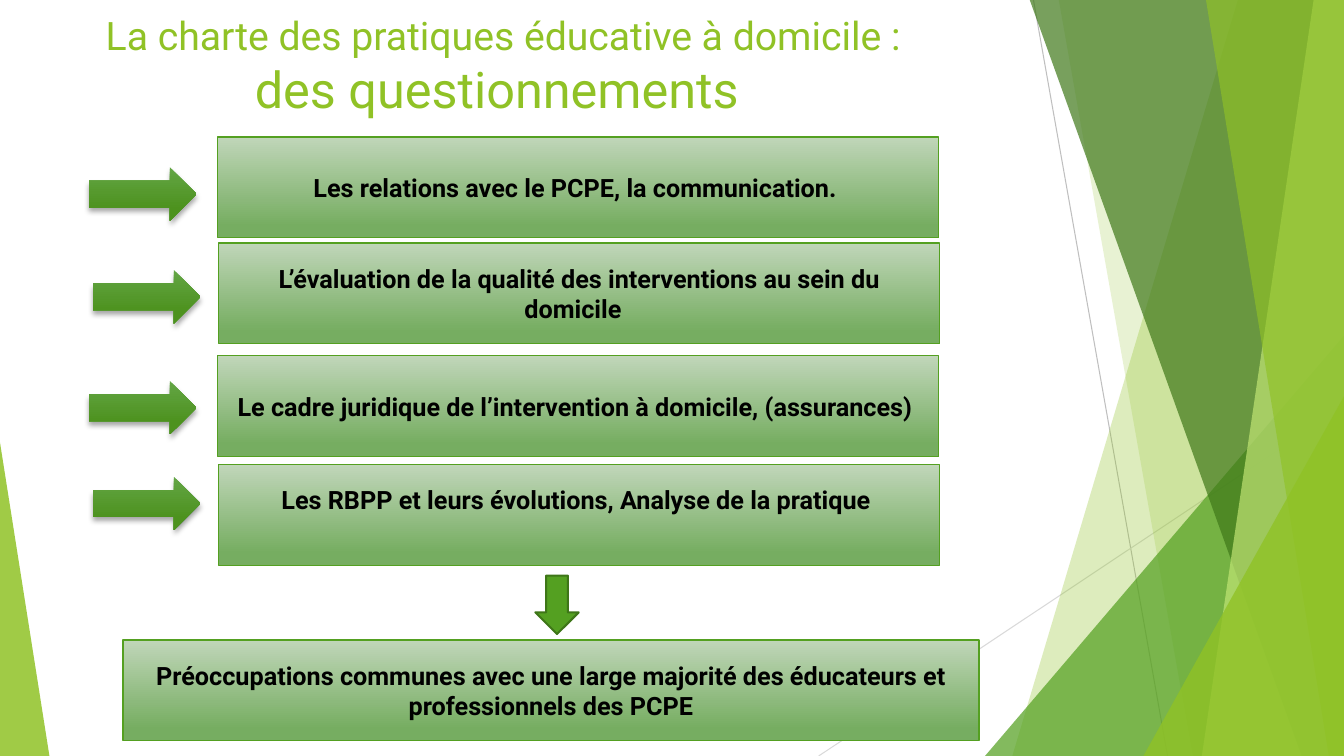
"""Build the slide on the questions raised by the home education charter."""
from lxml.etree import SubElement
from pptx import Presentation
from pptx.dml.color import RGBColor
from pptx.enum.shapes import MSO_CONNECTOR, MSO_SHAPE
from pptx.enum.text import MSO_ANCHOR, MSO_AUTO_SIZE, PP_ALIGN
from pptx.oxml.ns import qn
from pptx.util import Inches, Pt

COLORS = {
    "lime": "90C226", "green": "54A021", "forest": "3F7819", "pale": "C0E474",
    "box_top": "C0D6B9", "box_bottom": "76AD61",
    "arrow_top": "63A545", "arrow_bottom": "4D921E", "arrow_edge": "3E7618",
    "gray": "BFBFBF", "light_gray": "D9D9D9", "black": "000000",
}
FONT = "Roboto"


def paint(shape, colors, stop=1.0, opacity=100, edge=None, width=1):
    """Fill with one colour or a downward gradient, and set the outline."""
    shape.shadow.inherit = False
    if len(colors) == 2:
        shape.fill.gradient()
        shape.fill.gradient_angle = 270
        for gradient_stop, color, position in zip(shape.fill.gradient_stops, colors, (0, stop)):
            gradient_stop.color.rgb = RGBColor.from_string(COLORS[color])
            gradient_stop.position = position
    else:
        shape.fill.solid()
        shape.fill.fore_color.rgb = RGBColor.from_string(COLORS[colors[0]])
        if opacity < 100:
            color_node = shape._element.spPr.find(qn("a:solidFill"))[0]
            SubElement(color_node, qn("a:alpha"), val=str(opacity * 1000))
    if edge:
        shape.line.color.rgb = RGBColor.from_string(COLORS[edge])
        shape.line.width = Pt(width)
    else:
        shape.line.fill.background()


def add_run(paragraph, text, size, color, bold=False):
    """Append one formatted run."""
    run = paragraph.add_run()
    run.text = text
    run.font.name = FONT
    run.font.size = Pt(size)
    run.font.bold = bold
    run.font.color.rgb = RGBColor.from_string(COLORS[color])


presentation = Presentation()
presentation.slide_width = Inches(13.33)
presentation.slide_height = Inches(7.5)
slide = presentation.slides.add_slide(presentation.slide_layouts[5])
shapes = slide.shapes

for start_x, start_y, end_x, end_y, color in [
    (10.25, 0, 11.58, 7.5, "gray"),
    (13.33, 4.03, 8.12, 7.5, "light_gray"),
]:
    line = shapes.add_connector(
        MSO_CONNECTOR.STRAIGHT, Inches(start_x), Inches(start_y), Inches(end_x), Inches(end_y))
    line.line.color.rgb = RGBColor.from_string(COLORS[color])
    line.line.width = Pt(0.75)
    SubElement(line._element.spPr, qn("a:effectLst"))

facets = [
    ("band", 12.28, 10.04, "lime", 30),
    ("band", 10.5, 11.83, "lime", 20),
    ("triangle", 9.77, 3.33, 3.56, 1, "green", 72),
    ("band", 10.21, 12.91, "forest", 70),
    ("band", 13.03, 11.92, "pale", 70),
    ("band", 11.96, 13.18, "lime", 65),
    ("triangle", 11.34, 3.93, 1.99, 1, "lime", 80),
    ("triangle", 0, 4.39, 0.49, 0, "lime", 85),
]
for kind, *geometry, color, opacity in facets:
    if kind == "band":
        top_x, bottom_x = geometry
        builder = shapes.build_freeform(Inches(top_x), Inches(-0.01))
        corners = [(13.33, -0.01), (13.33, 7.5), (bottom_x, 7.5)]
        builder.add_line_segments([(Inches(x), Inches(y)) for x, y in corners])
        facet = builder.convert_to_shape()
    else:
        left, top, width, apex = geometry
        facet = shapes.add_shape(
            MSO_SHAPE.ISOSCELES_TRIANGLE,
            Inches(left), Inches(top), Inches(width), Inches(7.5 - top))
        facet.adjustments[0] = apex
    paint(facet, [color], opacity=opacity)

title = shapes.title
title.left, title.top = Inches(0.15), Inches(0.06)
title.width, title.height = Inches(9.68), Inches(1.44)
title.text_frame.word_wrap = True
title.text_frame.auto_size = MSO_AUTO_SIZE.NONE
title.text_frame.vertical_anchor = MSO_ANCHOR.TOP
paragraph = title.text_frame.paragraphs[0]
paragraph.alignment = PP_ALIGN.CENTER
add_run(paragraph, "La charte des pratiques éducative à domicile :", 28, "lime")
paragraph.add_line_break()
add_run(paragraph, "des questionnements ", 36, "lime")

for left, top in [(0.88, 1.66), (0.92, 2.68), (0.88, 3.78), (0.92, 4.73)]:
    arrow = shapes.add_shape(
        MSO_SHAPE.RIGHT_ARROW, Inches(left), Inches(top), Inches(1.07), Inches(0.53))
    paint(arrow, ["arrow_top", "arrow_bottom"], stop=0.78)
    effects = arrow._element.spPr.find(qn("a:effectLst"))
    shadow = SubElement(
        effects, qn("a:outerShdw"), blurRad=str(Pt(4)), dist=str(Pt(3)),
        dir="5400000", rotWithShape="0")
    shadow_color = SubElement(shadow, qn("a:srgbClr"), val=COLORS["black"])
    SubElement(shadow_color, qn("a:alpha"), val="35000")

boxes = [
    (2.16, 1.36, 7.15, 0.05, "Les relations avec le PCPE, la communication. "),
    (2.17, 2.41, 7.15, 0.05,
     "L’évaluation de la qualité des interventions au sein du domicile  "),
    (2.16, 3.53, 7.15, 0.05, "Le cadre juridique de l’intervention à domicile, (assurances) "),
    (2.17, 4.61, 7.15, 0.35, "Les RBPP et leurs évolutions, Analyse de la pratique "),
    (1.22, 6.35, 8.49, 0.05,
     "Préoccupations communes avec une large majorité des éducateurs et "
     "professionnels des PCPE"),
]
for left, top, width, bottom_margin, text in boxes:
    box = shapes.add_shape(
        MSO_SHAPE.RECTANGLE, Inches(left), Inches(top), Inches(width), Inches(1))
    paint(box, ["box_top", "box_bottom"], stop=0.88, edge="green")
    frame = box.text_frame
    frame.word_wrap = True
    frame.vertical_anchor = MSO_ANCHOR.MIDDLE
    frame.margin_bottom = Inches(bottom_margin)
    paragraph = frame.paragraphs[0]
    paragraph.alignment = PP_ALIGN.CENTER
    add_run(paragraph, text, 18, "black", bold=True)

down_arrow = shapes.add_shape(
    MSO_SHAPE.DOWN_ARROW, Inches(5.31), Inches(5.71), Inches(0.43), Inches(0.58))
paint(down_arrow, ["green"], edge="arrow_edge", width=1.5)

presentation.save("out.pptx")
